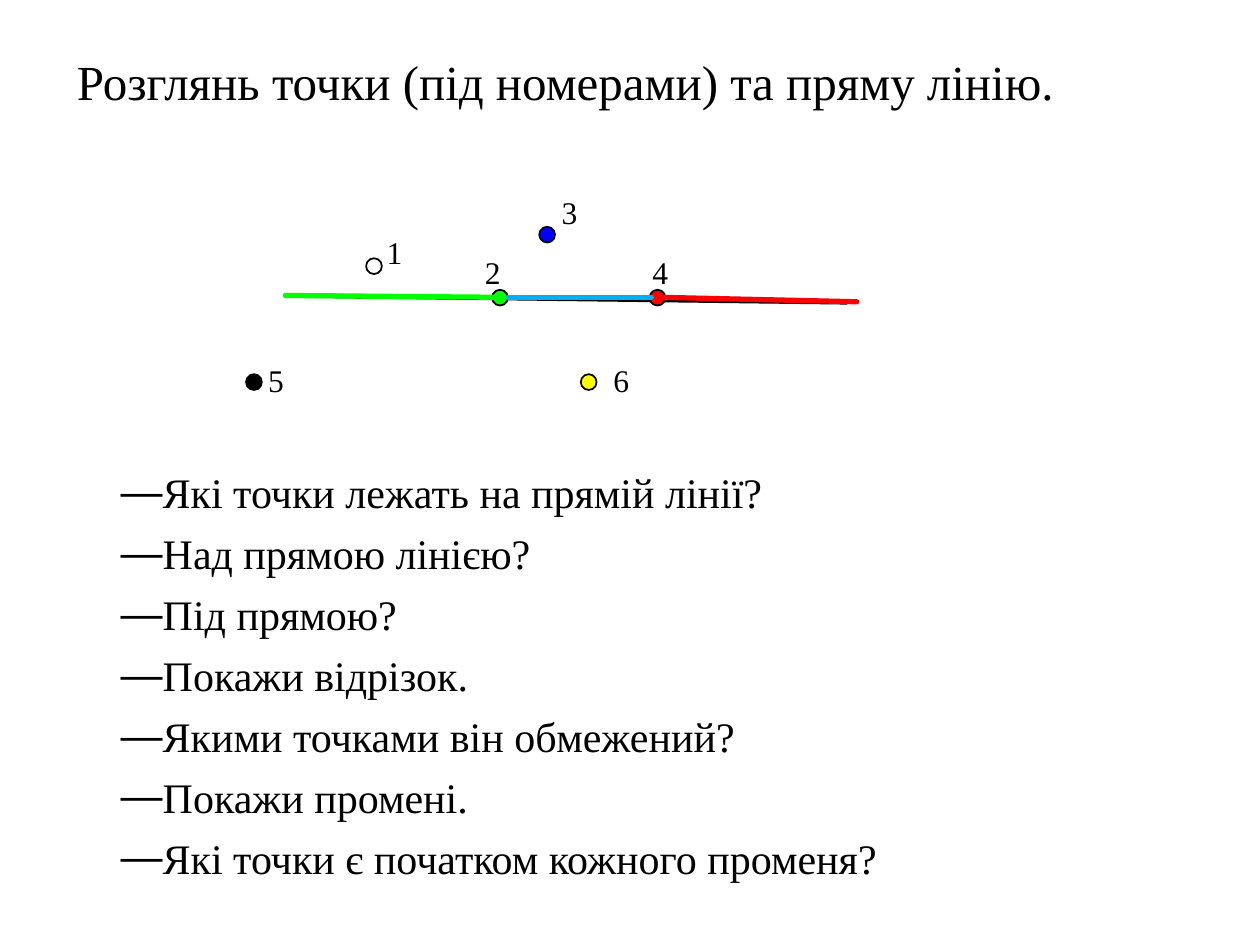
from lxml.etree import SubElement
from pptx import Presentation
from pptx.dml.color import RGBColor
from pptx.enum.shapes import MSO_CONNECTOR as Connector, MSO_SHAPE as Shape
from pptx.enum.text import MSO_ANCHOR as Anchor, MSO_AUTO_SIZE as AutoSize
from pptx.oxml.ns import qn
from pptx.util import Inches, Pt

# The slide is a grid of 100 columns by 75 rows
WIDTH, HEIGHT = Inches(10), Inches(7.5)
COLUMN, ROW = WIDTH / 100, HEIGHT / 75
FONT, BULLET_FONT = "Times New Roman", "Arial"
BLACK = "000000"
DOT = 1.25

TITLE = "Розглянь точки (під номерами) та пряму лінію."
QUESTIONS = [
    "Які точки лежать на прямій лінії?",
    "Над прямою лінією?",
    "Під прямою?",
    "Покажи відрізок.",
    "Якими точками він обмежений?",
    "Покажи промені.",
    "Які точки є початком кожного променя?",
]

# Number, dot (column, row), fill, label (column, row)
POINTS = [
    ("1", (29.06, 20.5), "FFFFFF", (29.7, 18)),
    ("2", (39.06, 23), "00FF00", (37.5, 19.6)),
    ("3", (42.8, 18), "0000FF", (43.6, 14.8)),
    ("4", (51.56, 23), "FF0000", (50.8, 19.6)),
    ("5", (19.53, 29.7), BLACK, (20.3, 28.2)),
    ("6", (46.1, 29.7), "FFFF00", (47.7, 28.2)),
]

# Start, end, colour, width in points
STRAIGHT_LINE = ((22.66, 23.45), (67.2, 24), BLACK, 2.5)
SEGMENT_AND_RAYS = [
    ((40.3, 23.6), (51.7, 23.6), "00B0F0", 3),
    ((22.66, 23.45), (40, 23.6), "00FF00", 3),
    ((52.5, 23.6), (68, 23.95), "FF0000", 3),
]


def grid(*lengths):
    """Turn column, row, column, row... into slide lengths."""
    return [round(length * (ROW if index % 2 else COLUMN))
            for index, length in enumerate(lengths)]


def colour(value):
    return RGBColor.from_string(value)


def set_format(target, values):
    for name, value in values.items():
        setattr(target, name, value)


def add_text(slide, box, lines, size, frame_format, space_before=0, bullet=None):
    frame = slide.shapes.add_textbox(*grid(*box)).text_frame
    set_format(frame, frame_format)
    for index, line in enumerate(lines):
        paragraph = frame.add_paragraph() if index else frame.paragraphs[0]
        paragraph.space_before = Pt(space_before)
        run = paragraph.add_run()
        run.text = line
        set_format(run.font, {"name": FONT, "size": Pt(size)})
        run.font.color.rgb = colour(BLACK)
        if bullet:
            properties = paragraph._p.get_or_add_pPr()
            SubElement(properties, qn("a:buFont"), typeface=BULLET_FONT)
            SubElement(properties, qn("a:buChar"), char=bullet)


def add_line(slide, start, end, line_colour, width):
    connector = slide.shapes.add_connector(
        Connector.STRAIGHT, *grid(*start), *grid(*end))
    connector.line.color.rgb = colour(line_colour)
    connector.line.width = Pt(width)
    connector.line._get_or_add_ln().set("cap", "rnd")
    SubElement(connector._element.spPr, qn("a:effectLst"))


def add_dot(slide, position, fill):
    dot = slide.shapes.add_shape(Shape.OVAL, *grid(*position, DOT, DOT))
    dot.shadow.inherit = False
    dot.fill.solid()
    dot.fill.fore_color.rgb = colour(fill)
    dot.line.color.rgb = colour(BLACK)
    dot.line.width = Pt(1)


def main():
    presentation = Presentation()
    set_format(presentation, {"slide_width": WIDTH, "slide_height": HEIGHT})
    slide = presentation.slides.add_slide(presentation.slide_layouts[6])

    # Title
    add_text(slide, (5.13, 2.85, 91, 7.2), [TITLE], 28,
             {"word_wrap": True, "vertical_anchor": Anchor.MIDDLE})

    # Straight line with the numbered points
    add_line(slide, *STRAIGHT_LINE)
    for number, position, fill, label in POINTS:
        add_dot(slide, position, fill)
        add_text(slide, (*label, 3.4, 4), [number], 18,
                 {"word_wrap": False, "auto_size": AutoSize.SHAPE_TO_FIT_TEXT})

    # Segment between points 2 and 4, and the two rays
    for line in SEGMENT_AND_RAYS:
        add_line(slide, *line)

    # Questions
    add_text(slide, (8.6, 36.55, 66.1, 34.3), QUESTIONS, 24,
             {"word_wrap": True, "auto_size": AutoSize.SHAPE_TO_FIT_TEXT},
             space_before=6, bullet="―")

    presentation.save("out.pptx")


if __name__ == "__main__":
    main()
